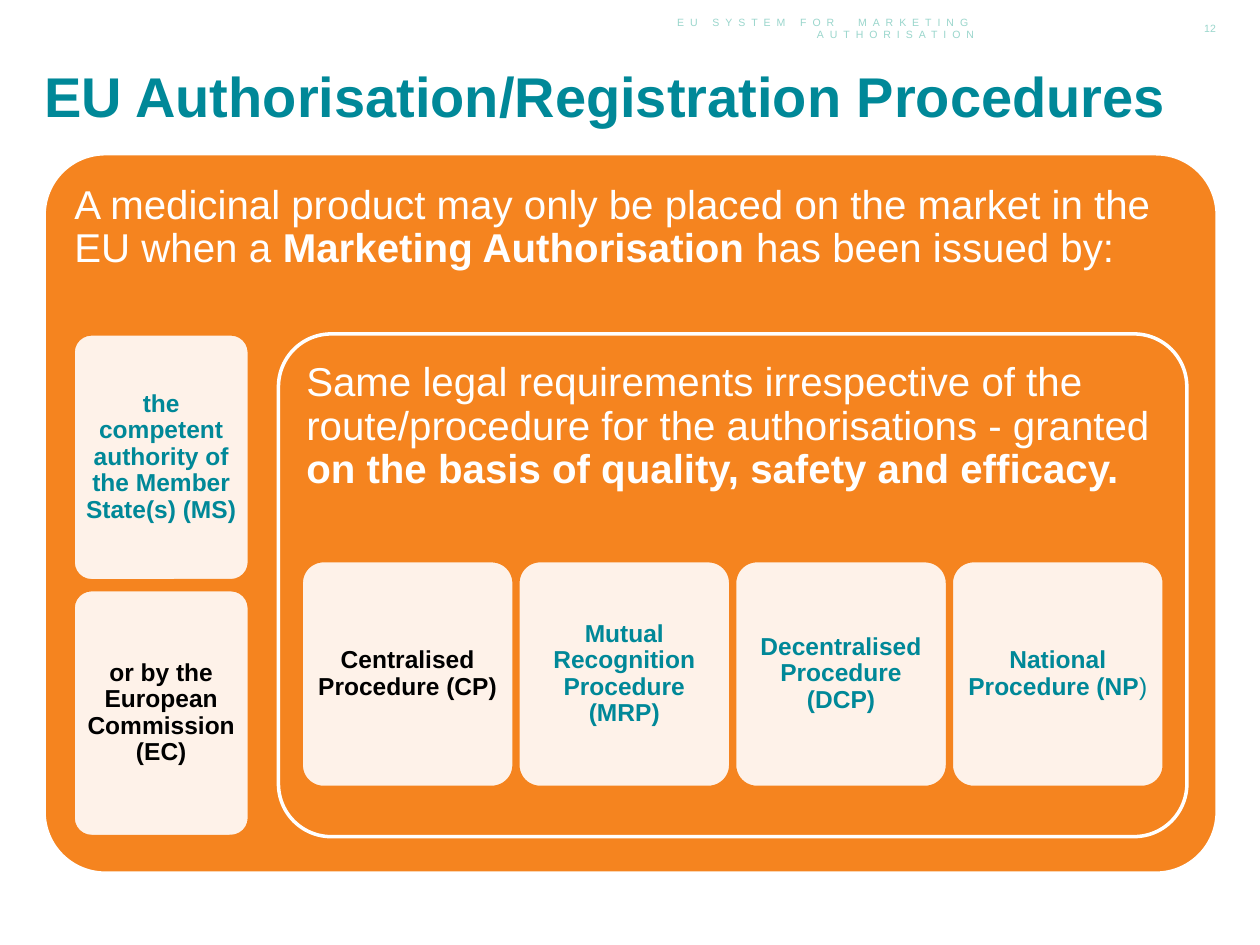
from dataclasses import dataclass

from lxml.etree import SubElement
from pptx import Presentation
from pptx.dml.color import RGBColor
from pptx.enum.shapes import MSO_SHAPE as Shape
from pptx.enum.text import MSO_ANCHOR as Anchor, MSO_AUTO_SIZE as AutoSize, PP_ALIGN as Align
from pptx.oxml.ns import qn
from pptx.util import Inches, Pt


@dataclass(frozen=True)
class Theme:
    font: str = "Arial"
    orange: str = "F5841F"
    teal: str = "008898"
    mint: str = "9AD6CC"
    white: str = "FFFFFF"
    black: str = "000000"
    title_size: int = 32
    panel_size: int = 23
    card_size: int = 14
    header_size: int = 6
    line_width: int = 2
    card_opacity: int = 90


class SlideBuilder:
    def __init__(self, slide, theme):
        self.slide = slide
        self.theme = theme

    def fill_text(self, frame, parts, size, color, align=Align.LEFT, anchor=Anchor.MIDDLE,
                  inset=0, line_spacing=None, tracking=None):
        """Fill a text frame with (wording, bold) parts."""
        frame.word_wrap = True
        frame.auto_size = AutoSize.NONE
        frame.vertical_anchor = anchor
        frame.margin_left = frame.margin_right = Inches(inset)
        frame.margin_top = frame.margin_bottom = Inches(inset)
        paragraph = frame.paragraphs[0]
        paragraph.alignment = align
        if line_spacing:
            paragraph.line_spacing = line_spacing
        for wording, bold in parts:
            run = paragraph.add_run()
            run.text = wording
            run.font.name = self.theme.font
            run.font.size = Pt(size)
            run.font.bold = bold
            run.font.color.rgb = RGBColor.from_string(color)
            if tracking:
                run._r.get_or_add_rPr().set("spc", str(round(tracking * 100)))

    def title(self, wording, left, top, width, height):
        heading = self.slide.shapes.title
        heading.left, heading.top = Inches(left), Inches(top)
        heading.width, heading.height = Inches(width), Inches(height)
        self.fill_text(heading.text_frame, [(wording, True)],
                       self.theme.title_size, self.theme.teal)

    def header(self, wording, left, top, width, height, tracking=None):
        box = self.slide.shapes.add_textbox(*map(Inches, (left, top, width, height)))
        self.fill_text(box.text_frame, [(wording, False)], self.theme.header_size,
                       self.theme.mint, Align.RIGHT, tracking=tracking)

    def rounded(self, left, top, width, height, corner, fill, line):
        box = self.slide.shapes.add_shape(
            Shape.ROUNDED_RECTANGLE, *map(Inches, (left, top, width, height)))
        box.adjustments[0] = corner
        box.shadow.inherit = False
        box.fill.solid()
        box.fill.fore_color.rgb = RGBColor.from_string(fill)
        box.line.color.rgb = RGBColor.from_string(line)
        box.line.width = Pt(self.theme.line_width)
        return box

    def panel(self, parts, left, top, width, height, corner):
        box = self.rounded(left, top, width, height, corner, self.theme.orange, self.theme.white)
        self.fill_text(box.text_frame, parts, self.theme.panel_size, self.theme.white,
                       anchor=Anchor.TOP, inset=0.1, line_spacing=0.9)

    def card(self, parts, color, left, top, width, height):
        box = self.rounded(left, top, width, height, 0.105, self.theme.white, self.theme.orange)
        tint = box._element.spPr.find(qn("a:solidFill")).find(qn("a:srgbClr"))
        SubElement(tint, qn("a:alpha")).set("val", str(self.theme.card_opacity * 1000))
        self.fill_text(box.text_frame, parts, self.theme.card_size, color, Align.CENTER,
                       inset=0.06, line_spacing=0.9)


def main():
    deck = Presentation()
    deck.slide_width, deck.slide_height = Inches(10), Inches(7.5)
    theme = Theme()
    title_only = deck.slide_layouts[5]
    page = SlideBuilder(deck.slides.add_slide(title_only), theme)

    # Running header, page number and title
    page.header("EU SYSTEM FOR  MARKETING AUTHORISATION", 4.56, 0.15, 3.17, 0.15, tracking=3.4)
    page.header("12", 9.31, 0.15, 0.34, 0.15)
    page.title("EU Authorisation/Registration Procedures", 0.35, 0.47, 9.31, 0.57)

    # Outer panel: who issues the authorisation
    page.panel([
        ("A medicinal product may only be placed on the market in the EU when a ", False),
        ("Marketing Authorisation ", True),
        ("has been issued by:", False),
    ], 0.35, 1.22, 9.31, 5.71, corner=0.085)

    issuers = [
        ("the competent authority of the Member State(s) (MS)", theme.teal),
        ("or by the European Commission (EC)", theme.black),
    ]
    for row, (issuer, color) in enumerate(issuers):
        page.card([(issuer, True)], color, 0.58, 2.65 + row * 2.03, 1.4, 1.96)

    # Inner panel: the four procedures
    page.panel([
        ("Same legal requirements irrespective of the route/procedure for the "
         "authorisations - granted ", False),
        ("on the basis of quality, safety and efficacy.", True),
    ], 2.21, 2.65, 7.21, 3.99, corner=0.105)

    procedures = [
        ([("Centralised Procedure (CP) ", True)], theme.black),
        ([("Mutual Recognition Procedure (MRP)", True)], theme.teal),
        ([("Decentralised Procedure (DCP)", True)], theme.teal),
        ([("National Procedure (NP", True), (")", False)], theme.teal),
    ]
    for column, (procedure, color) in enumerate(procedures):
        page.card(procedure, color, 2.39 + column * 1.72, 4.45, 1.69, 1.8)

    deck.save("out.pptx")


if __name__ == "__main__":
    main()
